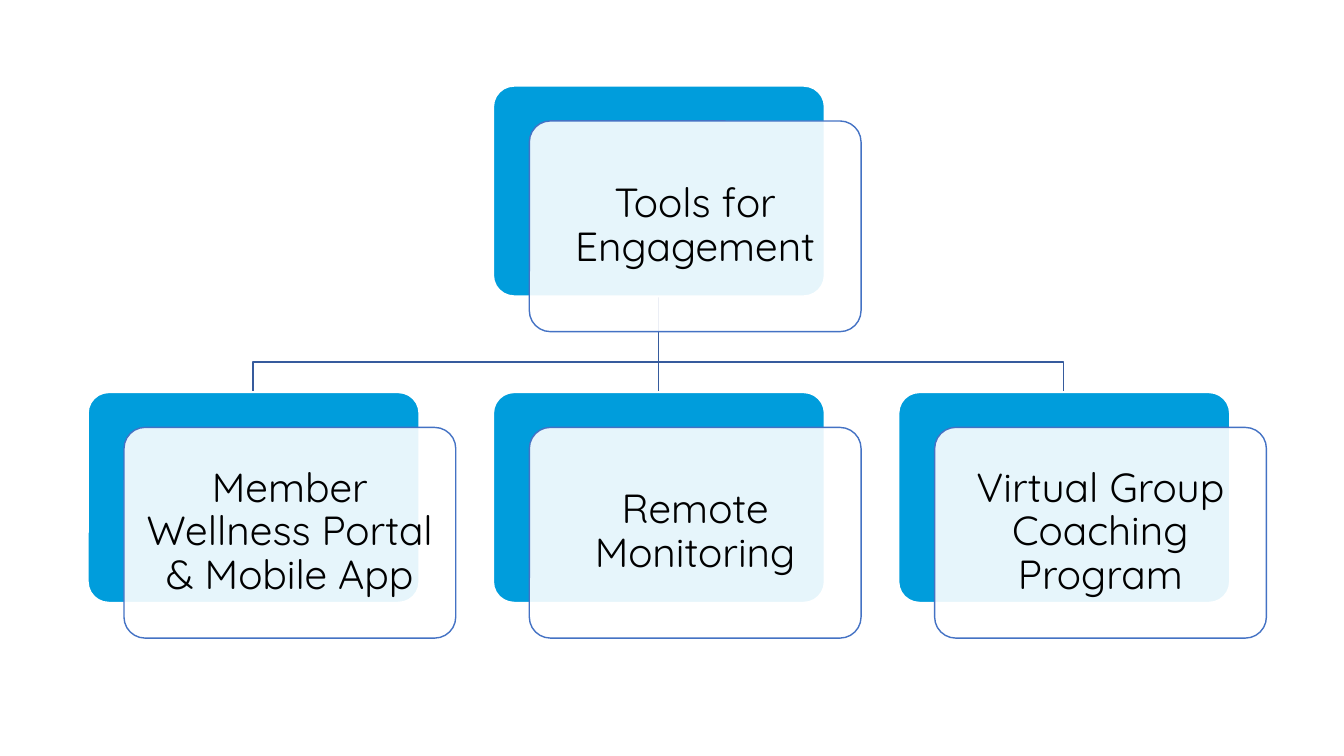
from lxml import etree
from pptx import Presentation
from pptx.dml.color import RGBColor
from pptx.enum.shapes import MSO_CONNECTOR, MSO_SHAPE
from pptx.enum.text import MSO_ANCHOR, PP_ALIGN
from pptx.oxml.ns import qn
from pptx.util import Pt

ROUNDED = MSO_SHAPE.ROUNDED_RECTANGLE
STRAIGHT = MSO_CONNECTOR.STRAIGHT
MIDDLE = MSO_ANCHOR.MIDDLE
CENTER = PP_ALIGN.CENTER

PX = 9144
COLORS = {
    "panel": "009DDC",
    "card": "FFFFFF",
    "panel_line": "FFFFFF",
    "card_line": "4472C4",
    "branch": "365B9D",
    "text": "000000",
}
FONT = "Quicksand"
BOX_WIDTH, BOX_HEIGHT = 329, 209
CARD_OFFSET_X, CARD_OFFSET_Y = 36, 35
COLUMN_STEP = 402
ROOT_BOX = (489, 85)
CHILD_LEFT, CHILD_TOP = 87, 389
BEND_Y = 359
ROOT_LABEL = "Tools for Engagement"
CHILD_LABELS = [
    "Member Wellness Portal & Mobile App",
    "Remote Monitoring",
    "Virtual Group Coaching Program",
]


def color(name):
    return RGBColor.from_string(COLORS[name])


def style_line(shape, name, width):
    shape.line.color.rgb = color(name)
    shape.line.width = Pt(width)


def add_panel(slide, left, top, fill, line, line_width):
    panel = slide.shapes.add_shape(
        ROUNDED, left * PX, top * PX, BOX_WIDTH * PX, BOX_HEIGHT * PX)
    panel.adjustments[0] = 0.1
    panel.shadow.inherit = False
    panel.fill.solid()
    panel.fill.fore_color.rgb = color(fill)
    style_line(panel, line, line_width)
    return panel


def add_node(slide, box, label):
    left, top = box
    add_panel(slide, left, top, "panel", "panel_line", 1.5)
    card = add_panel(slide, left + CARD_OFFSET_X, top + CARD_OFFSET_Y,
                     "card", "card_line", 1)
    fill_color = card.fill._xPr.find(qn("a:solidFill"))[0]
    etree.SubElement(fill_color, qn("a:alpha"), val="90000")

    frame = card.text_frame
    frame.word_wrap = True
    frame.vertical_anchor = MIDDLE
    frame.margin_left = frame.margin_right = 12 * PX
    frame.margin_top = frame.margin_bottom = 12 * PX
    para = frame.paragraphs[0]
    para.text = label
    para.alignment = CENTER
    para.line_spacing = 0.9
    para.font.name = FONT
    para.font.size = Pt(29)
    para.font.color.rgb = color("text")


def add_branch(slide, root_box, child_box):
    start_x = root_box[0] + BOX_WIDTH // 2
    start_y = root_box[1] + BOX_HEIGHT
    end_x = child_box[0] + BOX_WIDTH // 2
    end_y = child_box[1]
    if start_x == end_x:
        branch = slide.shapes.add_connector(
            STRAIGHT, start_x * PX, start_y * PX, end_x * PX, end_y * PX)
        etree.SubElement(branch._element.spPr, qn("a:effectLst"))
    else:
        builder = slide.shapes.build_freeform(start_x, start_y, scale=PX)
        builder.add_line_segments(
            [(start_x, BEND_Y), (end_x, BEND_Y), (end_x, end_y)], close=False)
        branch = builder.convert_to_shape()
        branch.shadow.inherit = False
        branch.fill.background()
    style_line(branch, "branch", 1)


def add_hierarchy(slide):
    child_boxes = [(CHILD_LEFT + column * COLUMN_STEP, CHILD_TOP)
                   for column in range(len(CHILD_LABELS))]
    for child_box in reversed(child_boxes):
        add_branch(slide, ROOT_BOX, child_box)
    add_node(slide, ROOT_BOX, ROOT_LABEL)
    for child_box, label in zip(child_boxes, CHILD_LABELS):
        add_node(slide, child_box, label)


def main():
    deck = Presentation()
    deck.slide_width = 1333 * PX
    deck.slide_height = 750 * PX
    slide = deck.slides.add_slide(deck.slide_layouts[6])
    add_hierarchy(slide)
    deck.save("out.pptx")


if __name__ == "__main__":
    main()
